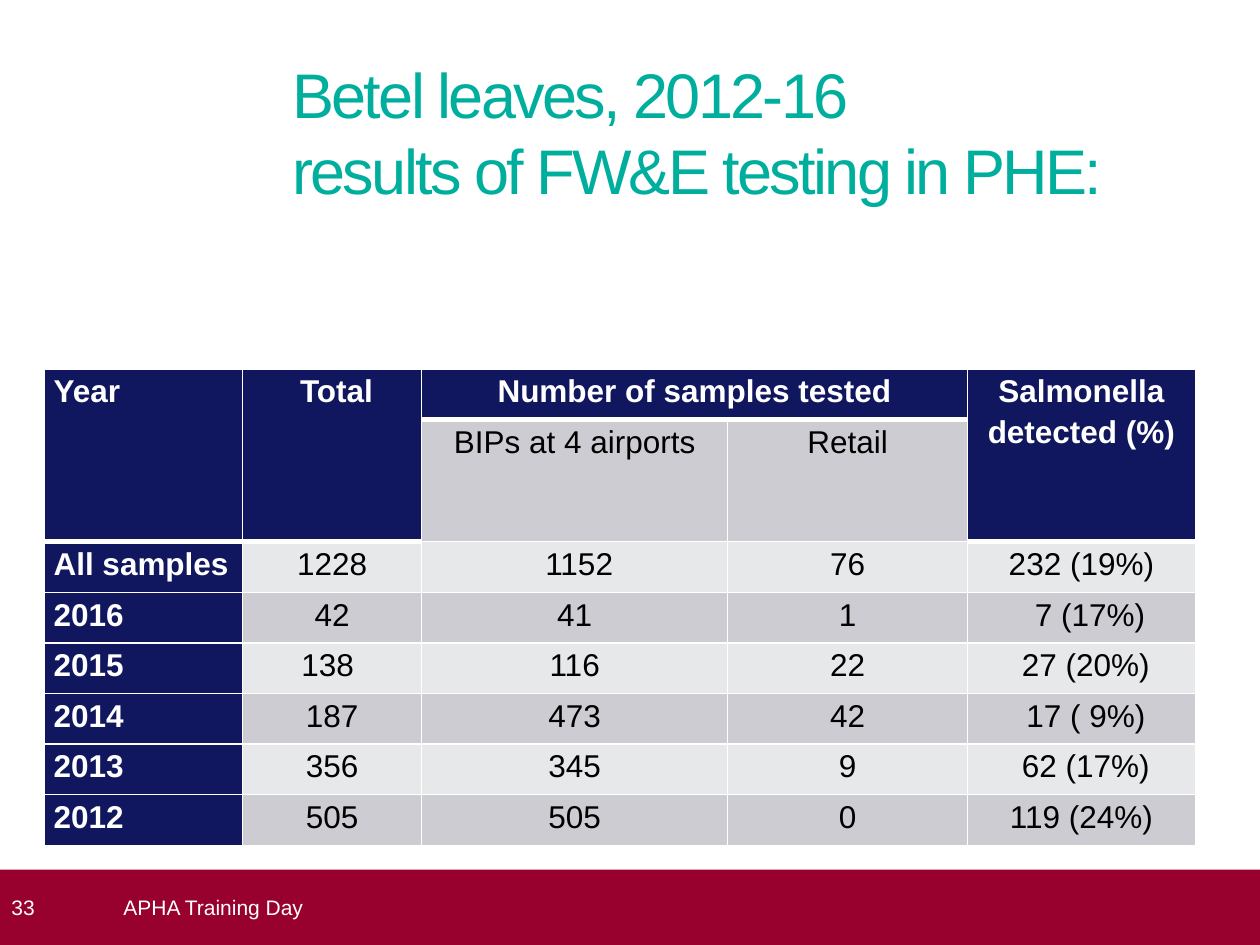
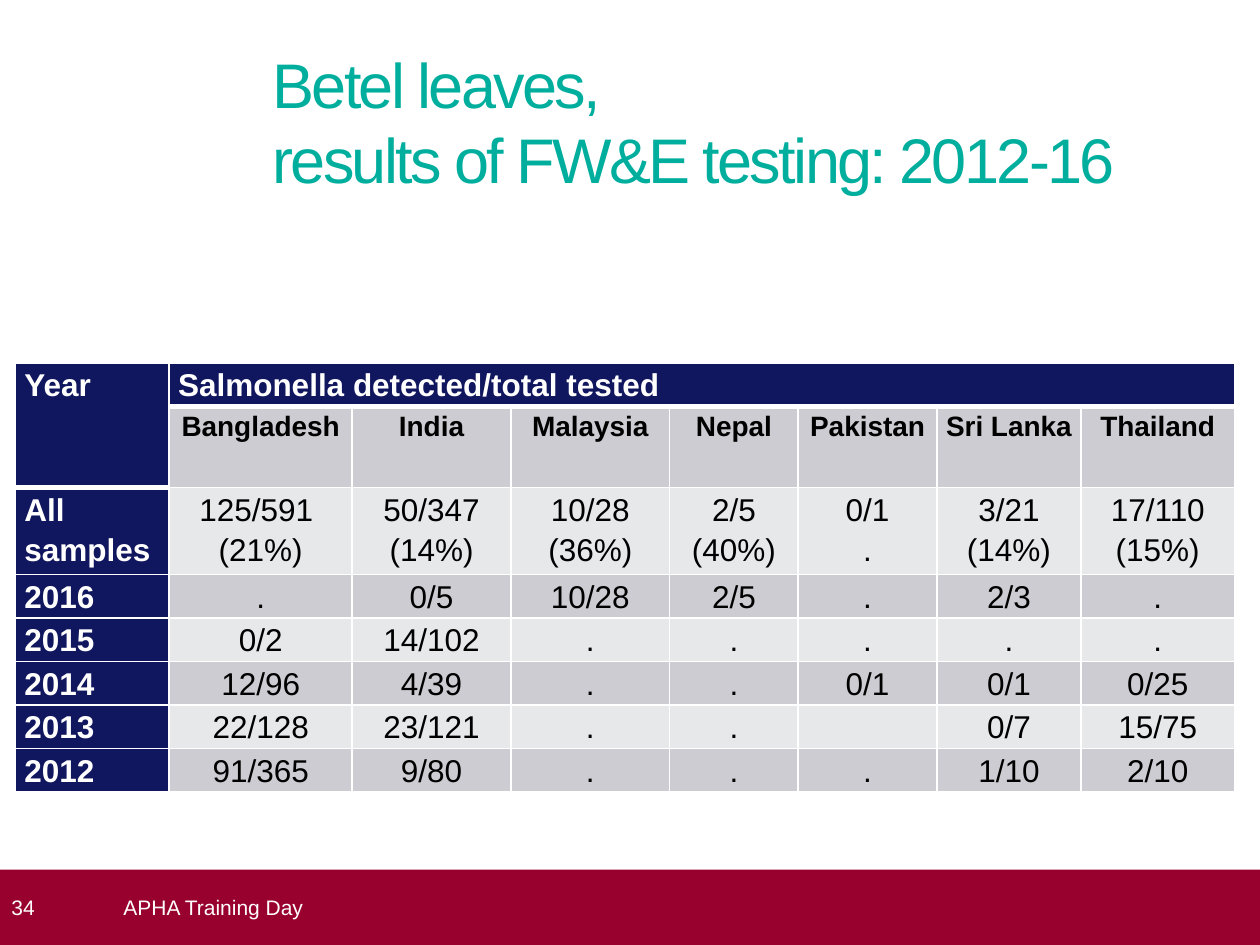
import pptx
import pptx.dml.color
import pptx.enum.shapes
import pptx.enum.text
import pptx.oxml
import pptx.oxml.ns
import pptx.util
from lxml import etree

Cm = pptx.util.Cm
Pt = pptx.util.Pt
ALIGN = pptx.enum.text.PP_ALIGN
ANCHOR = pptx.enum.text.MSO_ANCHOR

FONT = "Arial"
WHITE = "FFFFFF"
BLACK = "000000"
TEAL = "00AE9E"
NAVY = "11175E"
CRIMSON = "98002E"
BANDS = ("E7E8EA", "CCCCD2")

FOOTER_TOP = 17.53
FOOTER_HEIGHT = 1.52

SAMPLE_ROWS = [
    ["Year", "Total", "Number of samples tested", "", "Salmonella detected (%)"],
    ["", "", "BIPs at 4 airports", "Retail", ""],
    ["All samples", "1228", "1152", "76", "232 (19%)"],
    ["2016", "42", "41", "1", "7 (17%)"],
    ["2015", "138", "116", "22", "27 (20%)"],
    ["2014", "187", "473", "42", "17 ( 9%)"],
    ["2013", "356", "345", "9", "62 (17%)"],
    ["2012", "505", "505", "0", "119 (24%)"],
]
SAMPLE_INDENTS = {(0, 1): 0.18, (2, 2): 0.18, (3, 4): 0.35,
                  (4, 4): 0.18, (5, 4): 0.18, (6, 4): 0.18, (4, 1): -0.18}

COUNTRY_ROWS = [
    ["Year", "Salmonella detected/total tested", "", "", "", "", "", ""],
    ["", "Bangladesh", "India", "Malaysia", "Nepal", "Pakistan", "Sri Lanka", "Thailand"],
    ["All samples", "125/591 \n(21%)", "50/347 (14%)", "10/28\n(36%)", "2/5\n(40%)",
     "0/1\n.", "3/21\n(14%)", "17/110\n(15%)"],
    ["2016", ".", "0/5", "10/28", "2/5", ".", "2/3", "."],
    ["2015", "0/2", "14/102", ".", ".", ".", ".", "."],
    ["2014", "12/96", "4/39", ".", ".", "0/1", "0/1", "0/25"],
    ["2013", "22/128", "23/121", ".", ".", "", "0/7", "15/75"],
    ["2012", "91/365", "9/80", ".", ".", ".", "1/10", "2/10"],
]


def color(hex_value):
    return pptx.dml.color.RGBColor.from_string(hex_value)


def write_text(frame, text, size=18, fill=WHITE, bold=False, align=ALIGN.LEFT,
               line_spacing=None, tracking=None):
    frame.word_wrap = True
    for index, line in enumerate(text.split("\n")):
        paragraph = frame.paragraphs[0] if index == 0 else frame.add_paragraph()
        paragraph.text = line
        paragraph.alignment = align
        paragraph.line_spacing = line_spacing
        for run in paragraph.runs:
            run.font.name = FONT
            run.font.size = Pt(size)
            run.font.bold = bold
            run.font.color.rgb = color(fill)
            if tracking is not None:
                run._r.get_or_add_rPr().set("spc", str(round(tracking * 100)))


def set_margins(holder, left=0, right=0):
    holder.margin_left = Cm(left)
    holder.margin_right = Cm(right)
    holder.margin_top = holder.margin_bottom = 0


def add_text_box(slide, left, top, width, height, text, anchor=ANCHOR.TOP, **text_format):
    box = slide.shapes.add_textbox(Cm(left), Cm(top), Cm(width), Cm(height))
    set_margins(box.text_frame)
    box.text_frame.vertical_anchor = anchor
    write_text(box.text_frame, text, **text_format)


def add_title(slide, left, top, height, text):
    add_text_box(slide, left, top, 17.2, height, text, size=36, fill=TEAL, tracking=-1.5)


def add_footer(slide, number):
    band = slide.shapes.add_shape(pptx.enum.shapes.MSO_SHAPE.RECTANGLE, 0, Cm(FOOTER_TOP),
                                  Cm(25.4), Cm(FOOTER_HEIGHT))
    band.shadow.inherit = False
    band.fill.solid()
    band.fill.fore_color.rgb = color(CRIMSON)
    band.line.fill.background()
    set_margins(band.text_frame, left=0.23, right=0.25)
    band.text_frame.vertical_anchor = ANCHOR.MIDDLE
    write_text(band.text_frame, str(number), size=12)
    add_text_box(slide, 2.49, FOOTER_TOP, 22.4, FOOTER_HEIGHT, "APHA Training Day",
                 anchor=ANCHOR.MIDDLE, size=12)


def set_borders(cell, top, bottom):
    properties = cell._tc.get_or_add_tcPr()
    for side, width in (("L", 1), ("R", 1), ("T", top), ("B", bottom)):
        line = etree.SubElement(properties, pptx.oxml.ns.qn(f"a:ln{side}"), w=str(Pt(width)))
        solid = etree.SubElement(line, pptx.oxml.ns.qn("a:solidFill"))
        etree.SubElement(solid, pptx.oxml.ns.qn("a:srgbClr"), val=WHITE)


def add_results_table(slide, left, top, widths, heights, rows, merges, indents,
                      left_headings, subheading):
    frame = slide.shapes.add_table(len(rows), len(widths), Cm(left), Cm(top),
                                   Cm(sum(widths)), Cm(sum(heights)))
    table = frame.table
    for column, width in zip(table.columns, widths):
        column.width = Cm(width)
    for row, height in zip(table.rows, heights):
        row.height = Cm(height)
    for first, last in merges:
        table.cell(*first).merge(table.cell(*last))

    def is_heading(row, column):
        return row == 0 or (row == 1 and table.cell(row, column).is_spanned)

    for row, texts in enumerate(rows):
        for column, text in enumerate(texts):
            cell = table.cell(row, column)
            heading = is_heading(row, column)
            navy = heading or column == 0
            below_heading = row > 0 and is_heading(row - 1, column)
            set_borders(cell, top=3 if below_heading else 1, bottom=3 if heading else 1)
            cell.fill.solid()
            cell.fill.fore_color.rgb = color(NAVY if navy else BANDS[row % 2])
            indent = indents.get((row, column), 0)
            set_margins(cell, 0.18 + max(indent, 0), 0.18 + max(-indent, 0))
            text_format = {"bold": navy, "fill": WHITE if navy else BLACK}
            if row == 1 and not navy:
                text_format.update(subheading)
            starts_left = column == 0 or (row, column) in left_headings
            if not cell.is_spanned:
                write_text(cell.text_frame, text, line_spacing=1.15,
                           align=ALIGN.LEFT if starts_left else ALIGN.CENTER, **text_format)


def add_samples_slide(presentation):
    slide = presentation.slides.add_slide(presentation.slide_layouts[6])
    add_title(slide, 5.89, 1.12, 4.8, "Betel leaves, 2012-16\vresults of FW&E testing in PHE:")
    add_results_table(
        slide, 0.9, 7.44, [3.99, 3.61, 6.17, 4.83, 4.6], [1.02, 2.46] + [1.02] * 6,
        SAMPLE_ROWS,
        merges=[((0, 0), (1, 0)), ((0, 1), (1, 1)), ((0, 2), (0, 3)), ((0, 4), (1, 4))],
        indents=SAMPLE_INDENTS, left_headings=(), subheading={})
    add_footer(slide, 33)


def add_countries_slide(presentation):
    slide = presentation.slides.add_slide(presentation.slide_layouts[6])
    add_title(slide, 5.49, 0.91, 3.78, "Betel leaves, \vresults of FW&E testing: 2012-16")
    add_results_table(
        slide, 0.31, 7.32, [3.1, 3.69, 3.2, 3.2, 2.59, 2.8, 2.9, 3.1],
        [0.82, 1.63, 1.63] + [0.82] * 5, COUNTRY_ROWS,
        merges=[((0, 0), (1, 0)), ((0, 1), (0, 7))],
        indents={}, left_headings=[(0, 1)], subheading={"size": 16, "bold": True})
    add_footer(slide, 34)


def main():
    presentation = pptx.Presentation()
    presentation.slide_width = Cm(25.4)
    presentation.slide_height = Cm(19.05)
    add_samples_slide(presentation)
    add_countries_slide(presentation)
    presentation.save("out.pptx")


if __name__ == "__main__":
    main()
